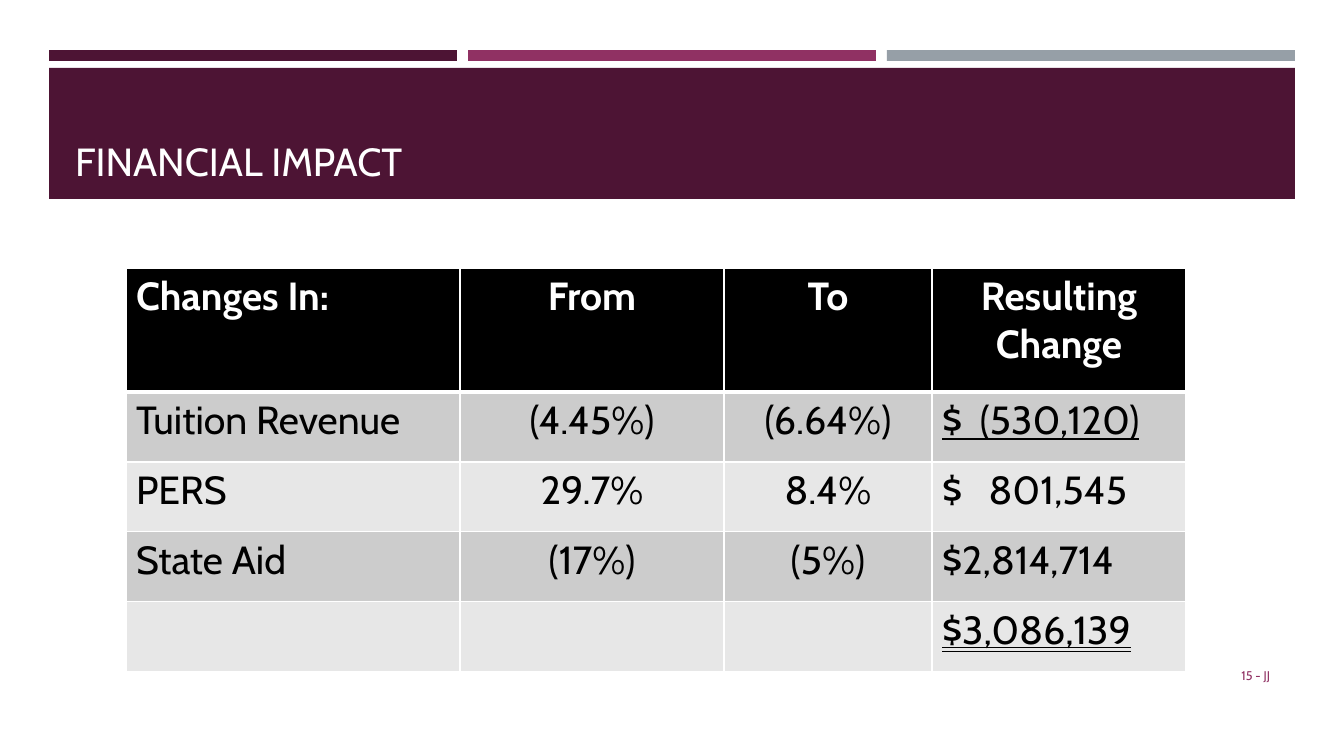
from lxml.etree import SubElement
from pptx import Presentation
from pptx.dml.color import RGBColor
from pptx.enum.shapes import MSO_SHAPE
from pptx.enum.text import MSO_ANCHOR, MSO_UNDERLINE, PP_ALIGN
from pptx.oxml.ns import qn
from pptx.util import Emu, Pt

COLORS = {
    "plum": "4D1434", "magenta": "903163", "gray": "969FA7",
    "white": "FFFFFF", "black": "000000",
    "band_dark": "CCCCCC", "band_light": "E7E7E7",
}


def px(length):
    return Emu(round(length * 914400 / 100.8))


def add_run(paragraph, text, size, color, bold=False, underline=None):
    run = paragraph.add_run()
    run.text = text
    run.font.name = "Cabin"
    run.font.size = Pt(size)
    run.font.bold = bold
    run.font.underline = underline
    run.font.color.rgb = RGBColor.from_string(COLORS[color])


presentation = Presentation()
presentation.slide_width = px(1344)
presentation.slide_height = px(756)
slide = presentation.slides.add_slide(presentation.slide_layouts[5])

bars = [
    (49, 50, 408, 11, "plum"),
    (468, 50, 408, 11, "magenta"),
    (887, 50, 408, 11, "gray"),
    (49, 68, 1246, 131, "plum"),
]
for left, top, width, height, color in bars:
    bar = slide.shapes.add_shape(MSO_SHAPE.RECTANGLE, px(left), px(top), px(width), px(height))
    bar.shadow.inherit = False
    bar.fill.solid()
    bar.fill.fore_color.rgb = RGBColor.from_string(COLORS[color])
    bar.line.fill.background()

title = slide.shapes.title
slide.shapes._spTree.append(title._element)
title.left, title.top, title.width, title.height = px(65), px(77), px(1216), px(112)
title.text_frame.vertical_anchor = MSO_ANCHOR.BOTTOM
title.text_frame.word_wrap = True
title_paragraph = title.text_frame.paragraphs[0]
title_paragraph.alignment = PP_ALIGN.LEFT
add_run(title_paragraph, "FINANCIAL IMPACT", 28, "white")

page_label = slide.shapes.add_textbox(px(1164), px(656), px(116), px(40))
page_label.text_frame.word_wrap = True
page_label.text_frame.vertical_anchor = MSO_ANCHOR.MIDDLE
page_paragraph = page_label.text_frame.paragraphs[0]
page_paragraph.alignment = PP_ALIGN.RIGHT
add_run(page_paragraph, "15 - JJ", 9, "magenta")

rows = [
    ["Changes In:", "From", "To", "Resulting Change"],
    ["Tuition Revenue", "(4.45%)", "(6.64%)", "$  (530,120)"],
    ["PERS", "29.7%", "8.4%", "$   801,545"],
    ["State Aid", "(17%)", "(5%)", "$2,814,714"],
    ["", "", "", "$3,086,139"],
]
column_widths = [334, 264, 208, 254]
row_heights = [124, 70, 70, 70, 70]
underlines = {(1, 3): True, (4, 3): MSO_UNDERLINE.DOUBLE_LINE}

table = slide.shapes.add_table(
    len(rows), len(column_widths), px(126), px(268), px(sum(column_widths)), px(sum(row_heights))
).table
for column, width in zip(table.columns, column_widths):
    column.width = px(width)
for row, height in zip(table.rows, row_heights):
    row.height = px(height)

for row_index, texts in enumerate(rows):
    is_header = row_index == 0
    fill = "black" if is_header else "band_dark" if row_index % 2 else "band_light"
    for column_index, text in enumerate(texts):
        cell = table.cell(row_index, column_index)
        properties = cell._tc.get_or_add_tcPr()
        for side in ("lnL", "lnR", "lnT", "lnB"):
            thick = (row_index, side) in ((0, "lnB"), (1, "lnT"))
            border = SubElement(properties, qn(f"a:{side}"), w=str(Pt(3 if thick else 1)))
            border_fill = SubElement(border, qn("a:solidFill"))
            SubElement(border_fill, qn("a:srgbClr"), val=COLORS["white"])
        cell.fill.solid()
        cell.fill.fore_color.rgb = RGBColor.from_string(COLORS[fill])
        if text:
            paragraph = cell.text_frame.paragraphs[0]
            centered = column_index in (1, 2) or (is_header and column_index == 3)
            paragraph.alignment = PP_ALIGN.CENTER if centered else PP_ALIGN.LEFT
            add_run(paragraph, text, 28, "white" if is_header else "black",
                    is_header, underlines.get((row_index, column_index)))

presentation.save("out.pptx")
